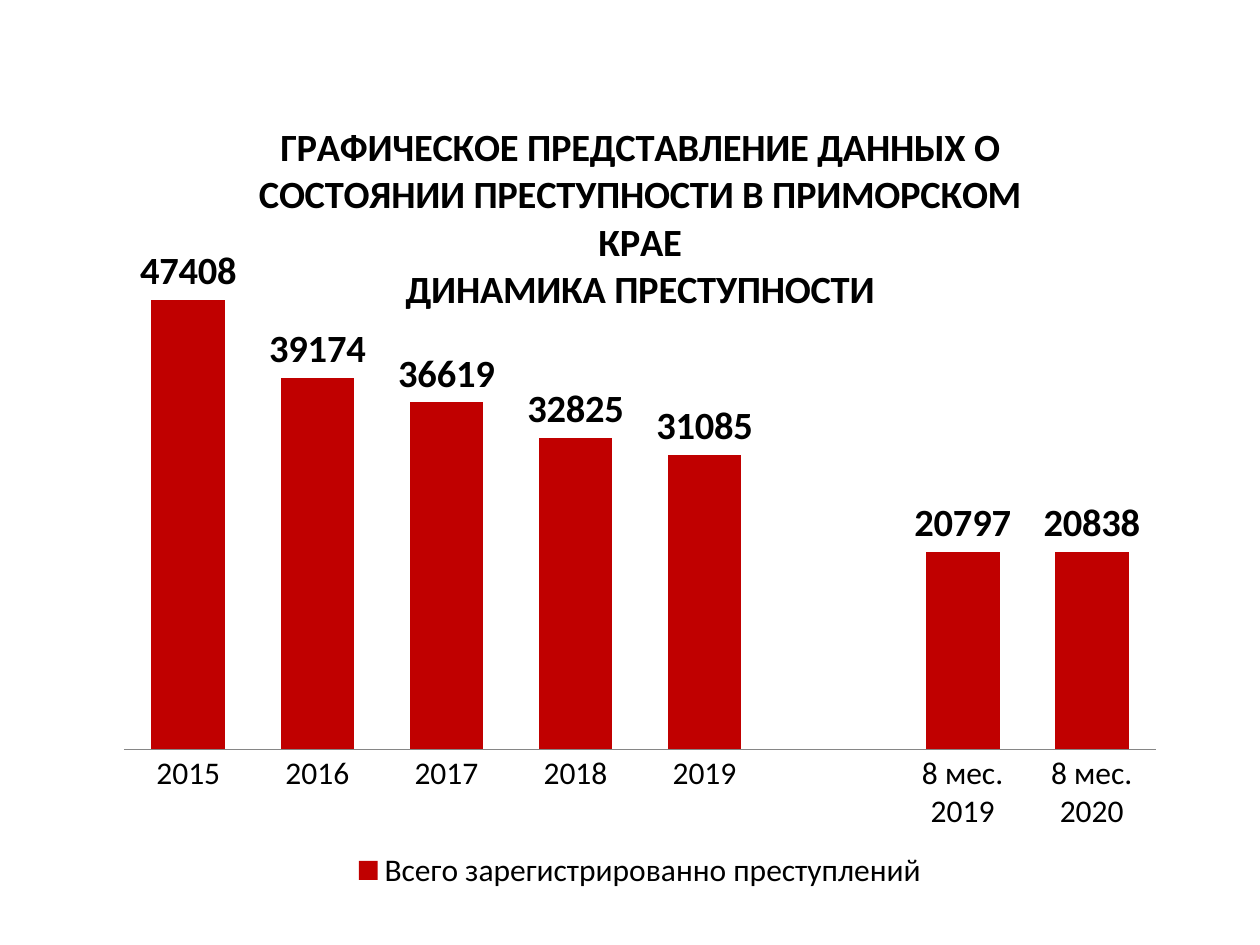
from pptx import Presentation
from pptx.chart.data import CategoryChartData
from pptx.dml.color import RGBColor
from pptx.enum.chart import (XL_CHART_TYPE, XL_LABEL_POSITION, XL_LEGEND_POSITION,
                             XL_TICK_LABEL_POSITION, XL_TICK_MARK)
from pptx.oxml import parse_xml
from pptx.oxml.ns import nsdecls, qn
from pptx.util import Pt

COLUMNS = XL_CHART_TYPE.COLUMN_CLUSTERED
OUTSIDE_END = XL_LABEL_POSITION.OUTSIDE_END
BOTTOM = XL_LEGEND_POSITION.BOTTOM
NO_LABELS = XL_TICK_LABEL_POSITION.NONE
NO_TICKS = XL_TICK_MARK.NONE

BLACK = RGBColor(0x00, 0x00, 0x00)
RED = RGBColor(0xC0, 0x00, 0x00)
GRAY = RGBColor(0x86, 0x86, 0x86)

EMU_PER_PX = 9144  # 100 px to the inch
BLANK_LAYOUT = 6

TITLE = ("ГРАФИЧЕСКОЕ ПРЕДСТАВЛЕНИЕ ДАННЫХ О СОСТОЯНИИ ПРЕСТУПНОСТИ В ПРИМОРСКОМ КРАЕ",
         "ДИНАМИКА ПРЕСТУПНОСТИ")
SERIES_NAME = "Всего зарегистрированно преступлений"
CRIMES = {"2015": 47408, "2016": 39174, "2017": 36619, "2018": 32825, "2019": 31085,
          "": None, "8 мес. 2019": 20797, "8 мес. 2020": 20838}


def px(length):
    return length * EMU_PER_PX


def apply_format(target, values):
    for name, value in values.items():
        setattr(target, name, value)


class SlideBuilder:
    """Holds the text style and the current slide."""

    font_name = "Calibri"
    body_size = Pt(18)
    strong_size = Pt(22)

    def __init__(self, presentation):
        self.slide = presentation.slides.add_slide(presentation.slide_layouts[BLANK_LAYOUT])

    def format_font(self, font, size, bold=False):
        apply_format(font, {"name": self.font_name, "size": size, "bold": bold})
        font.color.rgb = BLACK

    def add_column_chart(self, left, top, width, height, name, values, color, maximum):
        data = CategoryChartData()
        data.categories = list(values)
        data.add_series(name, list(values.values()))
        chart = self.slide.shapes.add_chart(
            COLUMNS, px(left), px(top), px(width), px(height), data).chart
        self.format_font(chart.font, self.body_size)

        plot = chart.plots[0]
        apply_format(plot, {"gap_width": 75, "vary_by_categories": False,
                            "has_data_labels": True})
        apply_format(plot.data_labels, {"show_value": True, "position": OUTSIDE_END})
        self.format_font(plot.data_labels.font, self.strong_size, bold=True)
        fill = plot.series[0].format.fill
        fill.solid()
        fill.fore_color.rgb = color

        apply_format(chart.category_axis, {"major_tick_mark": NO_TICKS,
                                           "minor_tick_mark": NO_TICKS})
        chart.category_axis.format.line.color.rgb = GRAY
        apply_format(chart.value_axis, {"minimum_scale": 0, "maximum_scale": maximum,
                                        "has_major_gridlines": False, "visible": False,
                                        "tick_label_position": NO_LABELS})
        chart.has_legend = True
        apply_format(chart.legend, {"position": BOTTOM, "include_in_layout": False})
        self.format_font(chart.legend.font, self.body_size)
        return chart

    def add_chart_title(self, chart, lines):
        chart.has_title = True
        frame = chart.chart_title.text_frame
        frame.text = "\n".join(lines)
        for paragraph in frame.paragraphs:
            for run in paragraph.runs:
                self.format_font(run.font, self.strong_size, bold=True)

    def place_plot(self, chart, x, y, w, h):
        """Fix the inner plot area, in fractions of the chart size."""
        area = chart.element.find(f".//{qn('c:plotArea')}")
        for layout in area.findall(qn("c:layout")):
            area.remove(layout)
        modes = '<c:xMode val="edge"/><c:yMode val="edge"/>'
        sizes = "".join(f'<c:{key} val="{value}"/>'
                        for key, value in zip("xywh", (x, y, w, h)))
        area.insert(0, parse_xml(
            f'<c:layout {nsdecls("c")}><c:manualLayout><c:layoutTarget val="inner"/>'
            f'{modes}{sizes}</c:manualLayout></c:layout>'))


def main():
    presentation = Presentation()
    apply_format(presentation, {"slide_width": px(1000), "slide_height": px(750)})
    builder = SlideBuilder(presentation)
    chart = builder.add_column_chart(83, 76, 850, 635, SERIES_NAME, CRIMES, RED, 50000)
    builder.add_chart_title(chart, TITLE)
    builder.place_plot(chart, 0.018, 0.225, 0.964, 0.592)
    presentation.save("out.pptx")


if __name__ == "__main__":
    main()
